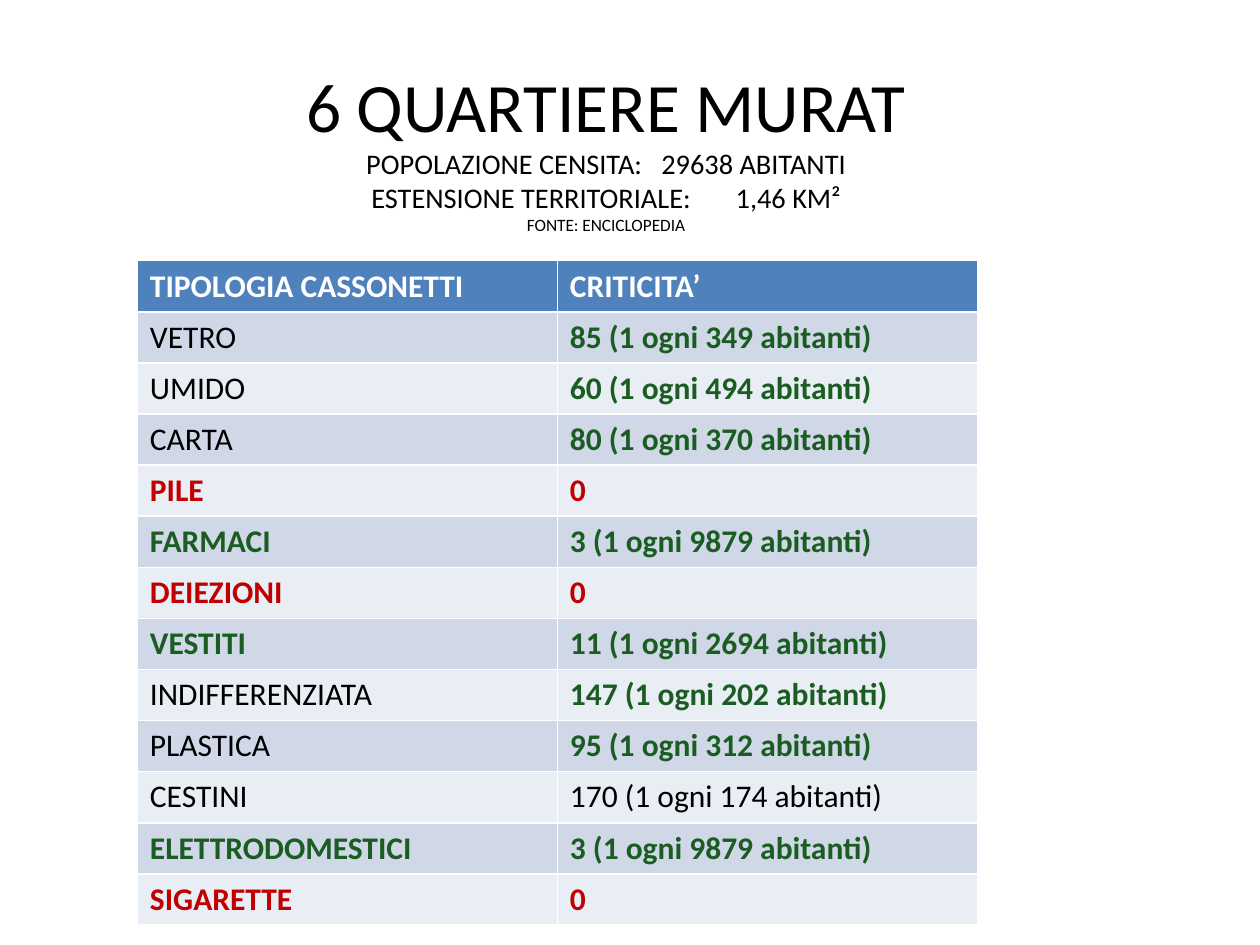
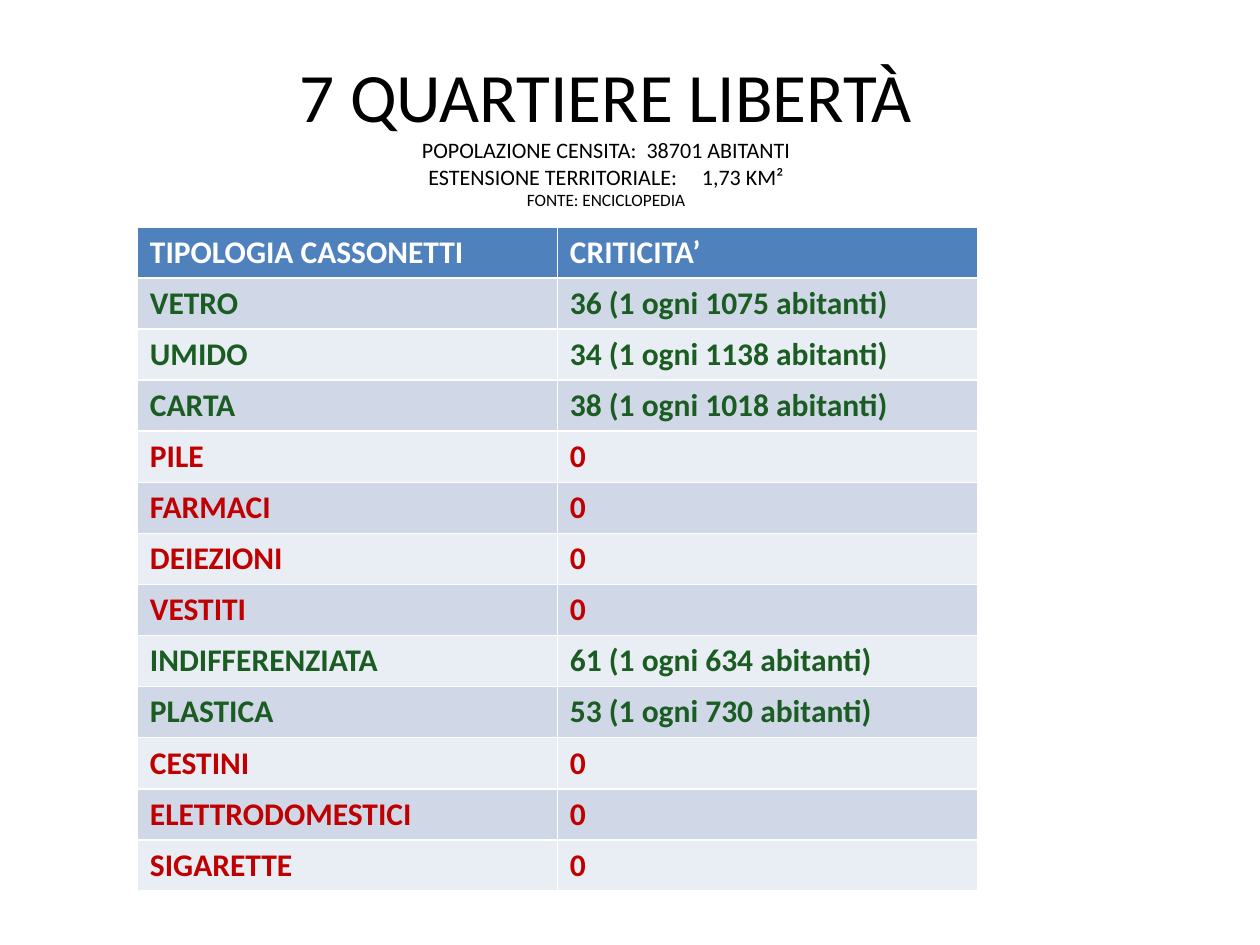
from dataclasses import dataclass

from pptx import Presentation
from pptx import util as u
from pptx.dml.color import RGBColor
from pptx.enum import text

FONT = "Calibri"
BLACK, WHITE, GREEN, RED = "000000", "FFFFFF", "1A5C22", "C00000"
HEADER_FILL = "4F81BD"
BAND_FILLS = ("D0D8E8", "E9EDF4")

HEADINGS = ("TIPOLOGIA CASSONETTI", "CRITICITA’")
BIN_TYPES = ("VETRO", "UMIDO", "CARTA", "PILE", "FARMACI", "DEIEZIONI", "VESTITI",
             "INDIFFERENZIATA", "PLASTICA", "CESTINI", "ELETTRODOMESTICI", "SIGARETTE")

TITLE_LEFT, TITLE_WIDTH, TITLE_HEIGHT = 22.3, 648, 90
TABLE_LEFT, COLUMN_WIDTH, ROW_HEIGHT = 78.5, 240, 29.2
TITLE_SIZE, SOURCE_SIZE = 39.6, 9.9


@dataclass(frozen=True)
class District:
    name: str
    population: int
    area: str
    bin_counts: tuple[int, ...]
    title_top: float
    inset_top: float
    inset_bottom: float
    detail_size: float
    population_gap: float
    area_gap: float
    table_top: float
    plain_labels: tuple[str, ...] = ()
    plain_values: tuple[str, ...] = ()


DISTRICTS = (
    District("6 QUARTIERE MURAT", 29638, "1,46 KM²",
             (85, 60, 80, 0, 3, 0, 11, 147, 95, 170, 3, 0),
             title_top=56.2, inset_top=3.6, inset_bottom=35.6,
             detail_size=16.2, population_gap=7.3, area_gap=22, table_top=149,
             plain_labels=("VETRO", "UMIDO", "CARTA", "INDIFFERENZIATA",
                           "PLASTICA", "CESTINI"),
             plain_values=("CESTINI",)),
    District("7 QUARTIERE LIBERTÀ", 38701, "1,73 KM²",
             (36, 34, 38, 0, 0, 0, 0, 61, 53, 0, 0, 0),
             title_top=28.1, inset_top=8.2, inset_bottom=3.6,
             detail_size=12.6, population_gap=2.9, area_gap=11.4, table_top=129.6),
)


def color(hex_code: str) -> RGBColor:
    return RGBColor.from_string(hex_code)


def set_font(paragraph, size: float, hex_code: str, bold: bool = False) -> None:
    font = paragraph.font
    font.name, font.size, font.bold = FONT, u.Pt(size), bold
    font.color.rgb = color(hex_code)


def add_detail(paragraph, label: str, value: str, gap: float) -> None:
    paragraph.add_run().text = label
    space = paragraph.add_run()
    space.text = " "
    space.font._element.set("spc", str(round(gap * 100)))
    paragraph.add_run().text = value


def format_title(slide, district: District) -> None:
    title = slide.shapes.title
    title.left, title.top = u.Pt(TITLE_LEFT), u.Pt(district.title_top)
    title.width, title.height = u.Pt(TITLE_WIDTH), u.Pt(TITLE_HEIGHT)
    frame = title.text_frame
    frame.word_wrap = True
    frame.auto_size = text.MSO_AUTO_SIZE.NONE
    frame.vertical_anchor = text.MSO_ANCHOR.MIDDLE
    frame.margin_top = u.Pt(district.inset_top)
    frame.margin_bottom = u.Pt(district.inset_bottom)

    heading = frame.paragraphs[0]
    population, area, source = (frame.add_paragraph() for _ in range(3))
    heading.text = district.name
    add_detail(population, "POPOLAZIONE CENSITA:", f"{district.population} ABITANTI",
               district.population_gap)
    add_detail(area, "ESTENSIONE TERRITORIALE:", district.area, district.area_gap)
    source.text = "FONTE: ENCICLOPEDIA"
    sizes = (TITLE_SIZE, district.detail_size, district.detail_size, SOURCE_SIZE)
    for paragraph, size in zip(frame.paragraphs, sizes):
        paragraph.alignment = text.PP_ALIGN.CENTER
        set_font(paragraph, size, BLACK)


def fill_cell(cell, content: str, fill: str, hex_code: str) -> None:
    cell.fill.solid()
    cell.fill.fore_color.rgb = color(fill)
    cell.text = content
    set_font(cell.text_frame.paragraphs[0], 18, hex_code, bold=hex_code != BLACK)


def add_bin_table(slide, district: District) -> None:
    row_count = len(BIN_TYPES) + 1
    table = slide.shapes.add_table(
        row_count, len(HEADINGS), u.Pt(TABLE_LEFT), u.Pt(district.table_top),
        u.Pt(COLUMN_WIDTH * len(HEADINGS)), u.Pt(ROW_HEIGHT * row_count)).table
    for row in table.rows:
        row.height = u.Pt(ROW_HEIGHT)
    for column, heading in enumerate(HEADINGS):
        fill_cell(table.cell(0, column), heading, HEADER_FILL, WHITE)

    for index, (bin_type, count) in enumerate(zip(BIN_TYPES, district.bin_counts)):
        fill = BAND_FILLS[index % 2]
        status = GREEN if count else RED
        value = "0"
        if count:
            value = f"{count} (1 ogni {round(district.population / count)} abitanti)"
        label_color = BLACK if bin_type in district.plain_labels else status
        value_color = BLACK if bin_type in district.plain_values else status
        fill_cell(table.cell(index + 1, 0), bin_type, fill, label_color)
        fill_cell(table.cell(index + 1, 1), value, fill, value_color)


def main() -> None:
    presentation = Presentation()
    presentation.slide_width, presentation.slide_height = u.Pt(720), u.Pt(540)
    for district in DISTRICTS:
        slide = presentation.slides.add_slide(presentation.slide_layouts[5])
        format_title(slide, district)
        add_bin_table(slide, district)
    presentation.save("out.pptx")


if __name__ == "__main__":
    main()
